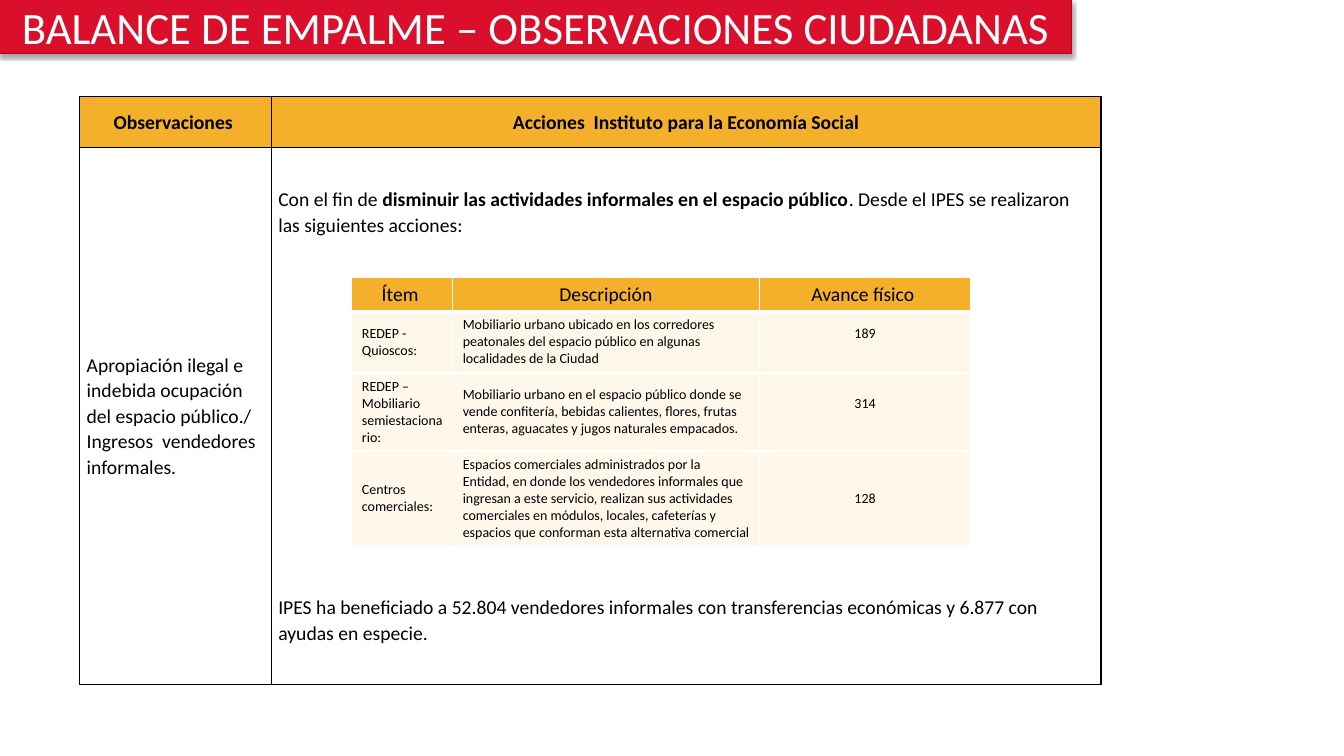
import pptx
import pptx.dml.color
import pptx.enum.shapes
import pptx.enum.text
import pptx.oxml
import pptx.util

Inches, Pt = pptx.util.Inches, pptx.util.Pt
PP_ALIGN = pptx.enum.text.PP_ALIGN
MIDDLE = pptx.enum.text.MSO_ANCHOR.MIDDLE
NS = 'xmlns:a="http://schemas.openxmlformats.org/drawingml/2006/main"'

RED, DARK_RED = "DA0F2B", "C00000"
GOLD, CREAM = "F5B02B", "FEF7EA"
BLACK, WHITE = "000000", "FFFFFF"


def rgb(code):
    return pptx.dml.color.RGBColor.from_string(code)


class SlideBuilder:
    font = "Calibri"

    def __init__(self, slide):
        self.slide = slide

    def paragraph(self, p, runs, para=None, **style):
        """Fill p with runs, each a text or a (text, bold) pair."""
        for name, value in (para or {}).items():
            setattr(p, name, value)
        for item in runs:
            text, bold = item if isinstance(item, tuple) else (item, False)
            r = p.add_run()
            r.text = text
            values = {"name": self.font, "size": Pt(style["size"]), "bold": bold}
            for name, value in values.items():
                setattr(r.font, name, value)
            r.font.color.rgb = rgb(style["color"])

    def banner(self, box, text):
        sp = self.slide.shapes.add_shape(
            pptx.enum.shapes.MSO_SHAPE.RECTANGLE, *map(Inches, box))
        sp.fill.solid()
        sp.fill.fore_color.rgb = rgb(RED)
        sp.line.color.rgb = rgb(DARK_RED)
        sp.line.width = Pt(0.75)
        sp.shadow.inherit = False
        effects = sp.element.spPr.find(pptx.oxml.ns.qn("a:effectLst"))
        effects.append(pptx.oxml.parse_xml(
            f'<a:outerShdw {NS} blurRad="{Pt(3.1)}" dist="{Pt(1.8)}" dir="5400000" '
            f'rotWithShape="0"><a:srgbClr val="{BLACK}"><a:alpha val="35000"/>'
            '</a:srgbClr></a:outerShdw>'))
        tf = sp.text_frame
        tf.vertical_anchor = MIDDLE
        tf.word_wrap = True
        self.paragraph(tf.paragraphs[0], [text],
                       {"alignment": PP_ALIGN.CENTER}, size=32, color=WHITE)

    def table(self, left, top, widths, heights):
        frame = self.slide.shapes.add_table(
            len(heights), len(widths), Inches(left), Inches(top),
            Inches(sum(widths)), Inches(sum(heights)))
        table = frame.table
        table.first_row = table.horz_banding = False
        for column, width in zip(table.columns, widths):
            column.width = Inches(width)
        for row, height in zip(table.rows, heights):
            row.height = Inches(height)
        return table

    def cell(self, cell, paragraphs, size, fill=None, alpha=100,
             border=BLACK, bottom=1, margins=None):
        """Fill one cell; paragraphs holds (runs, format values) pairs."""
        cell.vertical_anchor = MIDDLE
        for name, value in (margins or {}).items():
            setattr(cell, "margin_" + name, Inches(value))
        tf = cell.text_frame
        for i, (runs, para) in enumerate(paragraphs):
            p = tf.add_paragraph() if i else tf.paragraphs[0]
            self.paragraph(p, runs, para, size=size, color=BLACK)
        if fill:
            cell.fill.solid()
            cell.fill.fore_color.rgb = rgb(fill)
        else:
            cell.fill.background()
        tcPr = cell._tc.get_or_add_tcPr()
        if alpha < 100:
            color = tcPr.find(".//" + pptx.oxml.ns.qn("a:srgbClr"))
            color.append(pptx.oxml.parse_xml(f'<a:alpha {NS} val="{alpha * 1000}"/>'))
        for i, side in enumerate("LRTB"):
            width = Pt(bottom if side == "B" else 1)
            tcPr.insert(i, pptx.oxml.parse_xml(
                f'<a:ln{side} {NS} w="{width}"><a:solidFill><a:srgbClr val="{border}"/>'
                f'</a:solidFill></a:ln{side}>'))


def main():
    prs = pptx.Presentation()
    prs.slide_width, prs.slide_height = Inches(13.33), Inches(7.5)
    s = SlideBuilder(prs.slides.add_slide(prs.slide_layouts[6]))

    # Title banner
    s.banner((0, 0, 10.63, 0.53), "BALANCE DE EMPALME – OBSERVACIONES CIUDADANAS")

    # Observations table
    left = {"line_spacing": 1.07}
    centred = {"alignment": PP_ALIGN.CENTER, "line_spacing": 1.07}
    closing = {"line_spacing": 1.07, "space_before": Pt(255)}
    observations = [
        [[([("Observaciones ", True)], centred)],
         [([("Acciones  Instituto para la Economía Social", True)], centred)]],
        [[(["Apropiación ilegal e indebida ocupación del espacio público./ "
            "Ingresos  vendedores informales."], left)],
         [(["Con el fin de ",
            ("disminuir las actividades informales en el espacio público", True),
            ". Desde el IPES se realizaron las siguientes acciones:"], left),
          (["IPES ha beneficiado a 52.804 vendedores informales con transferencias "
            "económicas y 6.877 con ayudas en especie."], closing)]],
    ]
    margins = {"left": 0.07, "right": 0.07, "top": 0, "bottom": 0}
    table = s.table(0.79, 0.96, (1.9, 8.23), (0.5, 5.33))
    for i, row in enumerate(observations):
        for j, paragraphs in enumerate(row):
            s.cell(table.cell(i, j), paragraphs, 14,
                   fill=None if i else GOLD, margins=margins)

    # Progress table
    progress = [
        ("Ítem ", "Descripción", "Avance físico "),
        ("REDEP - Quioscos:",
         "Mobiliario urbano ubicado en los corredores peatonales del espacio público "
         "en algunas localidades de la Ciudad", "189"),
        ("REDEP – Mobiliario semiestacionario:",
         "Mobiliario urbano en el espacio público donde se vende confitería, bebidas "
         "calientes, flores, frutas enteras, aguacates y jugos naturales empacados.",
         "314"),
        ("Centros comerciales:",
         "Espacios comerciales administrados por la Entidad, en donde los vendedores "
         "informales que ingresan a este servicio, realizan sus actividades comerciales "
         "en módulos, locales, cafeterías y espacios que conforman esta alternativa "
         "comercial", "128"),
    ]
    row_styles = [
        {"size": 14, "fill": GOLD, "bottom": 3},
        {"size": 10, "fill": "F5B12E", "alpha": 10},
        {"size": 10, "fill": CREAM},
        {"size": 10, "fill": CREAM},
    ]
    table = s.table(3.49, 2.75, (1, 3.04, 2.1), (0.34, 0.61, 0.77, 0.94))
    for i, (row, style) in enumerate(zip(progress, row_styles)):
        for j, text in enumerate(row):
            middle = i == 0 or j == 2
            para = {"alignment": PP_ALIGN.CENTER if middle else PP_ALIGN.LEFT}
            raised = {"bottom": 0.22} if j == 2 and i in (1, 2) else None
            s.cell(table.cell(i, j), [([text], para)], border=WHITE,
                   margins=raised, **style)

    prs.save("out.pptx")


if __name__ == "__main__":
    main()
